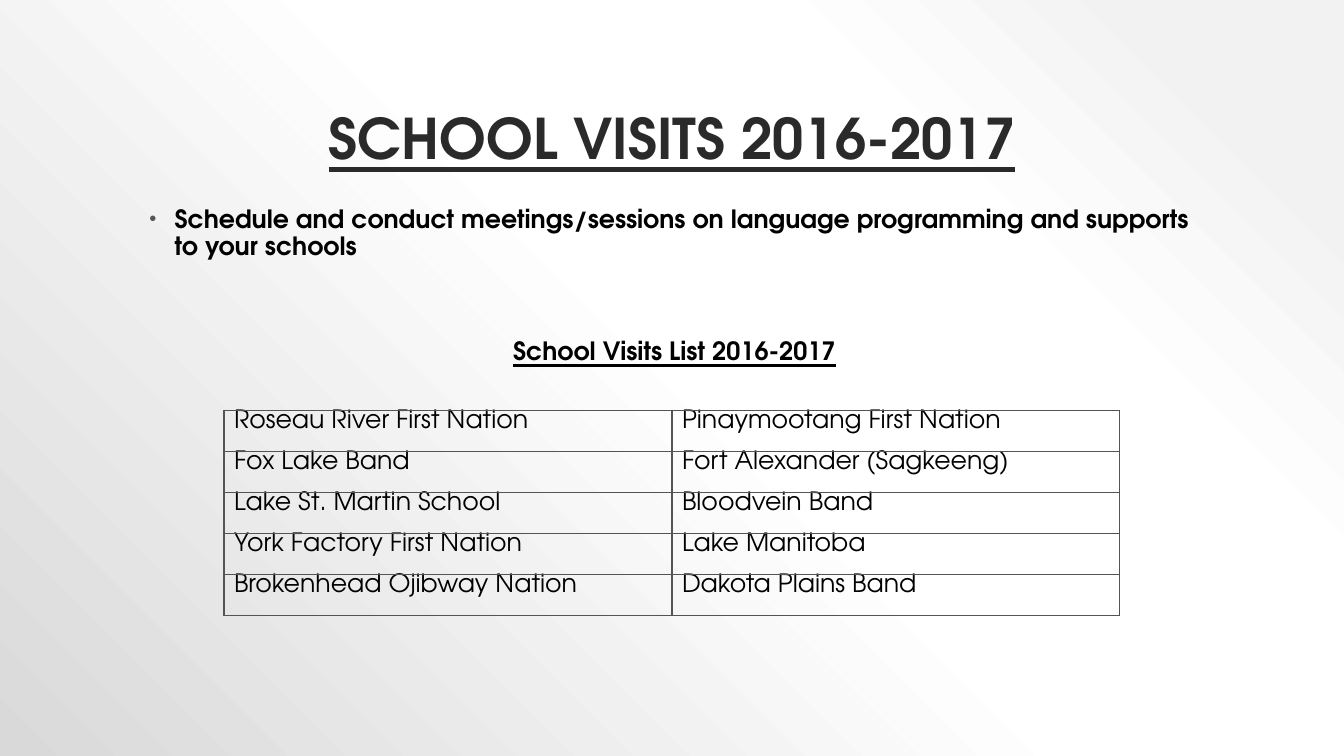
import dataclasses

import lxml.etree
import pptx
import pptx.dml.color
import pptx.enum.text
import pptx.oxml.ns
import pptx.util

Pt = pptx.util.Pt
qn = pptx.oxml.ns.qn
ALIGN = pptx.enum.text.PP_ALIGN
ANCHOR = pptx.enum.text.MSO_ANCHOR


@dataclasses.dataclass(frozen=True)
class Theme:
    font: str = "TeX Gyre Adventor"
    title_size: int = 40
    body_size: int = 18
    title: str = "2A2A2A"
    text: str = "000000"
    accent: str = "545454"
    backdrop: tuple = ((10, "F2F2F2"), (28, "FFFFFF"), (48, "FFFFFF"), (100, "D9D9D9"))


THEME = Theme()
SCHOOLS = (
    ("Roseau River First Nation", "Pinaymootang First Nation"),
    ("Fox Lake Band", "Fort Alexander (Sagkeeng)"),
    ("Lake St. Martin School", "Bloodvein Band"),
    ("York Factory First Nation", "Lake Manitoba"),
    ("Brokenhead Ojibway Nation", "Dakota Plains Band"),
)


def add_element(parent, tag, **attributes):
    child = lxml.etree.SubElement(parent, qn(tag))
    for name, value in attributes.items():
        child.set(name, str(value))
    return child


def add_color(parent, color):
    add_element(parent, "a:srgbClr", val=color)


def paint_background(page):
    """Fill the page with a gradient spreading from the top right corner."""
    page.background.fill.gradient()
    gradient = page.element.find(".//" + qn("a:gradFill"))
    for child in list(gradient):
        gradient.remove(child)
    stops = add_element(gradient, "a:gsLst")
    for position, color in THEME.backdrop:
        add_color(add_element(stops, "a:gs", pos=position * 1000), color)
    spread = add_element(gradient, "a:path", path="circle")
    add_element(spread, "a:fillToRect", l=100000, b=100000)


def style(para, size, color, bold=False, underline=False):
    font = para.font
    font.name, font.size = THEME.font, Pt(size)
    font.bold, font.underline = bold, underline
    font.color.rgb = pptx.dml.color.RGBColor.from_string(color)


def add_text_frame(page, left, top, width, height, anchor):
    box = page.shapes.add_textbox(Pt(left), Pt(top), Pt(width), Pt(height))
    frame = box.text_frame
    frame.word_wrap = True
    frame.vertical_anchor = anchor
    return frame


def add_title(page, left, top, width, height):
    frame = add_text_frame(page, left, top, width, height, ANCHOR.BOTTOM)
    para = frame.paragraphs[0]
    para.text = "SCHOOL VISITS 2016-2017"
    para.alignment, para.line_spacing = ALIGN.CENTER, 0.9
    style(para, THEME.title_size, THEME.title, bold=True, underline=True)


def add_bullet(para, margin, hanging):
    properties = para._p.get_or_add_pPr()
    properties.set("marL", str(Pt(margin)))
    properties.set("indent", str(-Pt(hanging)))
    add_color(add_element(properties, "a:buClr"), THEME.accent)
    add_element(properties, "a:buSzPct", val=80000)
    add_element(properties, "a:buFont", typeface="Arial")
    add_element(properties, "a:buChar", char="•")


def add_body(page, left, top, width, height):
    frame = add_text_frame(page, left, top, width, height, ANCHOR.TOP)
    task, heading = frame.paragraphs[0], frame.add_paragraph()
    task.text = ("Schedule and conduct meetings/sessions on language "
                 "programming and supports to your schools")
    heading.text = "School Visits List 2016-2017"
    for para in (task, heading):
        para.line_spacing = 0.9
        style(para, THEME.body_size, THEME.text, bold=True, underline=para is heading)
    heading.alignment, heading.space_before = ALIGN.CENTER, Pt(55.5)
    heading._p.get_or_add_pPr().set("marL", str(Pt(3.6)))
    add_bullet(task, margin=21.6, hanging=18)


def add_cell_borders(cell):
    properties = cell._tc.get_or_add_tcPr()
    for index, side in enumerate(("a:lnL", "a:lnR", "a:lnT", "a:lnB")):
        line = add_element(properties, side, w=Pt(1))
        add_color(add_element(line, "a:solidFill"), THEME.accent)
        properties.insert(index, line)


def add_school_table(page, left, top, width, height):
    table = page.shapes.add_table(
        len(SCHOOLS), len(SCHOOLS[0]), Pt(left), Pt(top), Pt(width), Pt(height)
    ).table
    table.first_row = table.horz_banding = False
    for row, names in enumerate(SCHOOLS):
        for column, name in enumerate(names):
            cell = table.cell(row, column)
            cell.text = name
            cell.margin_top = cell.margin_bottom = 0
            cell.fill.background()
            style(cell.text_frame.paragraphs[0], THEME.body_size, THEME.text)
            add_cell_borders(cell)


def build_visits_page(deck):
    page = deck.slides.add_slide(deck.slide_layouts[6])
    paint_background(page)
    add_title(page, 96, 21.6, 768, 104.4)
    add_body(page, 96, 144, 768, 342)
    add_school_table(page, 160, 293, 640, 146.5)


def main():
    deck = pptx.Presentation()
    deck.slide_width, deck.slide_height = Pt(960), Pt(540)
    build_visits_page(deck)
    deck.save("out.pptx")


if __name__ == "__main__":
    main()
